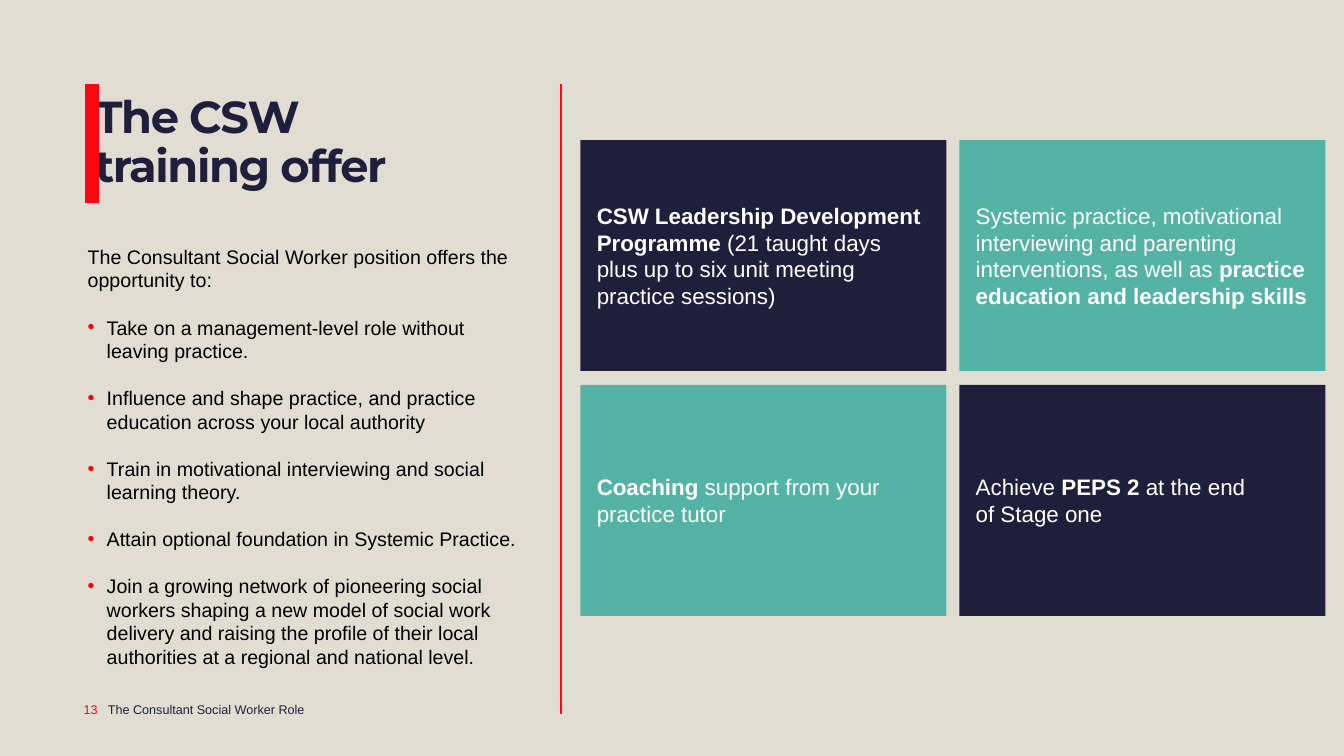
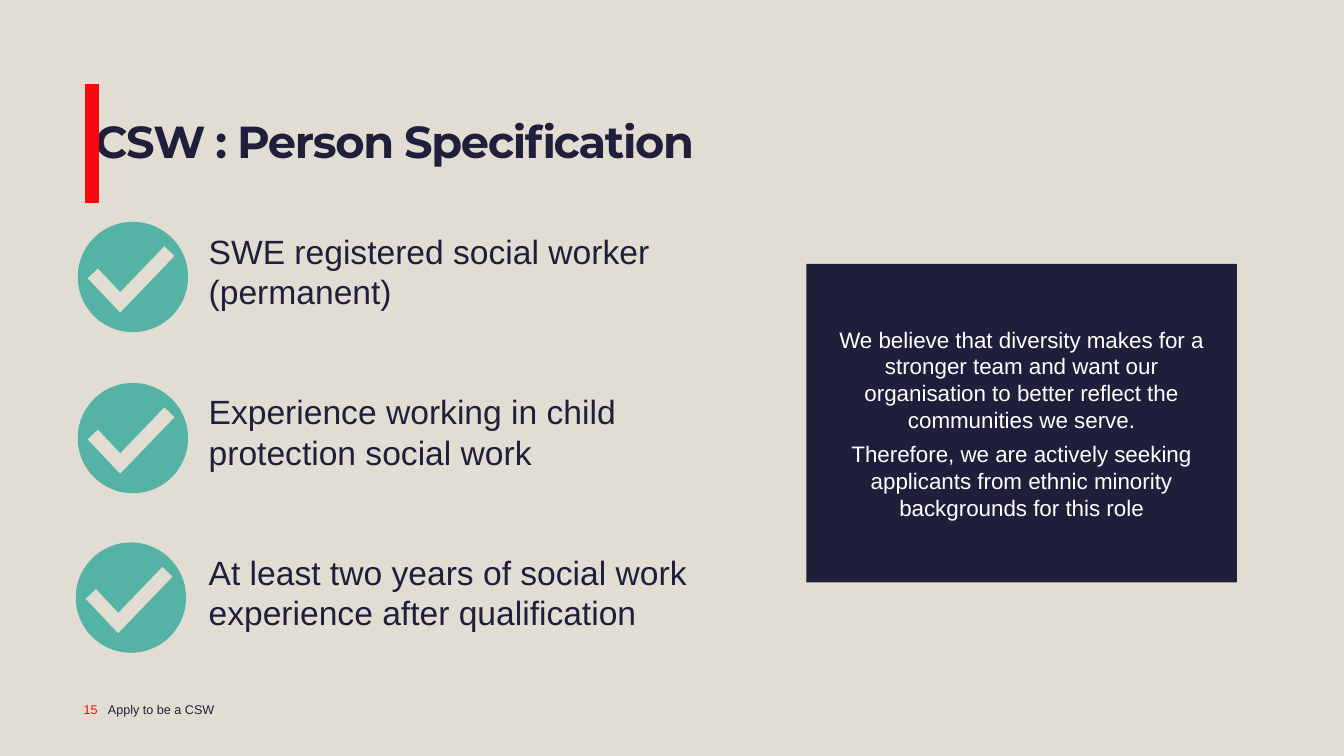
from dataclasses import dataclass
from lxml.etree import SubElement
from pptx import Presentation
from pptx.dml.color import RGBColor as RGB
from pptx.enum.shapes import MSO_CONNECTOR as CONN, MSO_SHAPE as SHAPE
from pptx.enum.text import MSO_ANCHOR as ANCHOR, PP_ALIGN as ALIGN
from pptx.oxml.ns import qn
from pptx.util import Cm, Pt


@dataclass(frozen=True)
class Theme:
    sand: RGB = RGB(0xE2, 0xDD, 0xD3)
    navy: RGB = RGB(0x1F, 0x1F, 0x3C)
    teal: RGB = RGB(0x55, 0xB3, 0xA5)
    red: RGB = RGB(0xFF, 0x05, 0x0F)
    bullet: RGB = RGB(0xFF, 0x00, 0x00)
    white: RGB = RGB(0xFF, 0xFF, 0xFF)
    black: RGB = RGB(0x00, 0x00, 0x00)
    head_font: str = "Montserrat"
    body_font: str = "Arial"
    title: int = 32
    criteria: int = 24
    panel: int = 16
    body: int = 14
    footer: int = 9


T = Theme()


def add_run(p, text, size, color, bold=False, font=T.body_font):
    for i, part in enumerate(text.split("\n")):
        if i:
            p.add_line_break()
        r = p.add_run()
        r.text = part
        r.font.name, r.font.size, r.font.bold = font, Pt(size), bold
        r.font.color.rgb = color
        if font == T.head_font:
            r._r.get_or_add_rPr().set("spc", "-100")


def next_paragraph(tf, i):
    return tf.add_paragraph() if i else tf.paragraphs[0]


def set_frame(tf, anchor, inset=0):
    tf.word_wrap = True
    tf.vertical_anchor = anchor
    tf.margin_left = tf.margin_right = tf.margin_top = tf.margin_bottom = Cm(inset)


def add_text_box(s, x, y, w, h, anchor=ANCHOR.TOP):
    tf = s.shapes.add_textbox(Cm(x), Cm(y), Cm(w), Cm(h)).text_frame
    set_frame(tf, anchor)
    return tf


def add_line(s, x, top, bottom, width):
    c = s.shapes.add_connector(CONN.STRAIGHT, Cm(x), Cm(top), Cm(x), Cm(bottom))
    c.line.color.rgb = T.red
    c.line.width = Pt(width)
    SubElement(c._element.spPr, qn("a:effectLst"))


def add_filled(shapes, kind, x, y, w, h, color):
    sp = shapes.add_shape(kind, Cm(x), Cm(y), Cm(w), Cm(h))
    sp.shadow.inherit = False
    sp.fill.solid()
    sp.fill.fore_color.rgb = color
    sp.line.fill.background()
    return sp


def add_panel(shapes, x, y, w, h, color, paragraphs, align=ALIGN.LEFT):
    tf = add_filled(shapes, SHAPE.RECTANGLE, x, y, w, h, color).text_frame
    set_frame(tf, ANCHOR.MIDDLE, 0.41)
    for i, runs in enumerate(paragraphs):
        p = next_paragraph(tf, i)
        p.alignment = align
        p.space_before = Pt(5 if i else 0)
        for text, bold in runs:
            add_run(p, text, T.panel, T.white, bold)


def add_tick(s, x, y):
    shapes = s.shapes.add_group_shape().shapes
    add_filled(shapes, SHAPE.OVAL, x, y, 2.78, 2.78, T.teal)
    start, *rest = [(Cm(x + dx), Cm(y + dy))
                    for dx, dy in ((0.38, 1.3), (1.07, 2.03), (2.31, 0.74))]
    fb = shapes.build_freeform(*start)
    fb.add_line_segments(rest, close=False)
    sp = fb.convert_to_shape()
    sp.shadow.inherit = False
    sp.fill.background()
    sp.line.color.rgb = T.sand
    sp.line.width = Pt(10)
    SubElement(sp.line._get_or_add_ln(), qn("a:miter"), lim="800000")


def add_bullet(p):
    pPr = p._p.get_or_add_pPr()
    pPr.set("marL", str(Cm(0.48)))
    pPr.set("indent", str(Cm(-0.48)))
    SubElement(SubElement(pPr, qn("a:buClr")), qn("a:srgbClr"), val=str(T.bullet))
    SubElement(pPr, qn("a:buFont"), typeface=T.body_font)
    SubElement(pPr, qn("a:buChar"), char="•")


def add_offer_list(s, intro, items):
    tf = add_text_box(s, 2.21, 6.17, 10.93, 10.76)
    add_run(tf.paragraphs[0], intro, T.body, T.black)
    for item in items:
        p = tf.add_paragraph()
        p.space_before = Pt(16.8)
        add_bullet(p)
        add_run(p, item, T.body, T.black)


def add_criteria(s, items):
    tf = add_text_box(s, 5.26, 5.82, 13.13, 10.4)
    for i, item in enumerate(items):
        p = next_paragraph(tf, i)
        p.space_before = Pt(57 if i else 0)
        add_run(p, item, T.criteria, T.navy)


def add_base_slide(prs, title, number, footer):
    s = prs.slides.add_slide(prs.slide_layouts[6])
    for x, w, text, color in ((2.72, 11.43, footer, T.navy),
                              (2.11, 0.56, number, T.red)):
        tf = add_text_box(s, x, 17.04, w, 1.02, ANCHOR.BOTTOM)
        add_run(tf.paragraphs[0], text, T.footer, color)
    p = add_text_box(s, 2.39, 2.11, 16.46, 3.02, ANCHOR.MIDDLE).paragraphs[0]
    p.line_spacing = 0.9
    add_run(p, title, T.title, T.navy, True, T.head_font)
    add_line(s, 2.31, 2.11, 5.11, 10)
    return s


def build_training_offer(prs):
    s = add_base_slide(prs, "The CSW \ntraining offer", "13",
                       "The Consultant Social Worker Role")
    panels = (
        (("CSW Leadership Development Programme ", True),
         ("(21 taught days \nplus up to six unit meeting practice sessions)", False)),
        (("Systemic practice, motivational interviewing and parenting "
          "interventions, as well as ", False),
         ("practice education and leadership skills", True)),
        (("Coaching ", True), ("support from your practice tutor", False)),
        (("Achieve ", False), ("PEPS 2", True),
         (" at the end \nof Stage one", False)),
    )
    shapes = s.shapes.add_group_shape().shapes
    for i, runs in enumerate(panels):
        row, col = divmod(i, 2)
        color = T.navy if row == col else T.teal
        add_panel(shapes, 14.63 + 9.55 * col, 3.53 + 6.17 * row, 9.22, 5.82,
                  color, [runs])
    add_line(s, 14.14, 2.11, 18, 1)
    add_offer_list(
        s, "The Consultant Social Worker position offers the opportunity to:",
        ("Take on a management-level role without leaving practice.",
         "Influence and shape practice, and practice education across your "
         "local authority",
         "Train in motivational interviewing and social learning theory.",
         "Attain optional foundation in Systemic Practice.",
         "Join a growing network of pioneering social workers shaping a new "
         "model of social work delivery and raising the profile of their local "
         "authorities at a regional and national level."))


def build_person_specification(prs):
    s = add_base_slide(prs, "CSW : Person Specification", "15",
                       "Apply to be a CSW")
    for x, y in ((1.96, 5.59), (1.96, 9.65), (1.91, 13.67)):
        add_tick(s, x, y)
    add_criteria(s, (
        "SWE registered social worker (permanent)",
        "Experience working in child protection social work",
        "At least two years of social work experience after qualification"))
    add_panel(s.shapes, 20.32, 6.65, 10.85, 8.03, T.navy, (
        (("We believe that diversity makes for a stronger team and want our "
          "organisation to better reflect the communities we serve.", False),),
        (("Therefore, we are actively seeking applicants from ethnic minority "
          "backgrounds for this role", False),)), ALIGN.CENTER)


def main():
    prs = Presentation()
    prs.slide_width, prs.slide_height = Cm(33.87), Cm(19.05)
    fill = prs.slide_master.background.fill
    fill.solid()
    fill.fore_color.rgb = T.sand
    build_training_offer(prs)
    build_person_specification(prs)
    prs.save("out.pptx")


if __name__ == "__main__":
    main()
